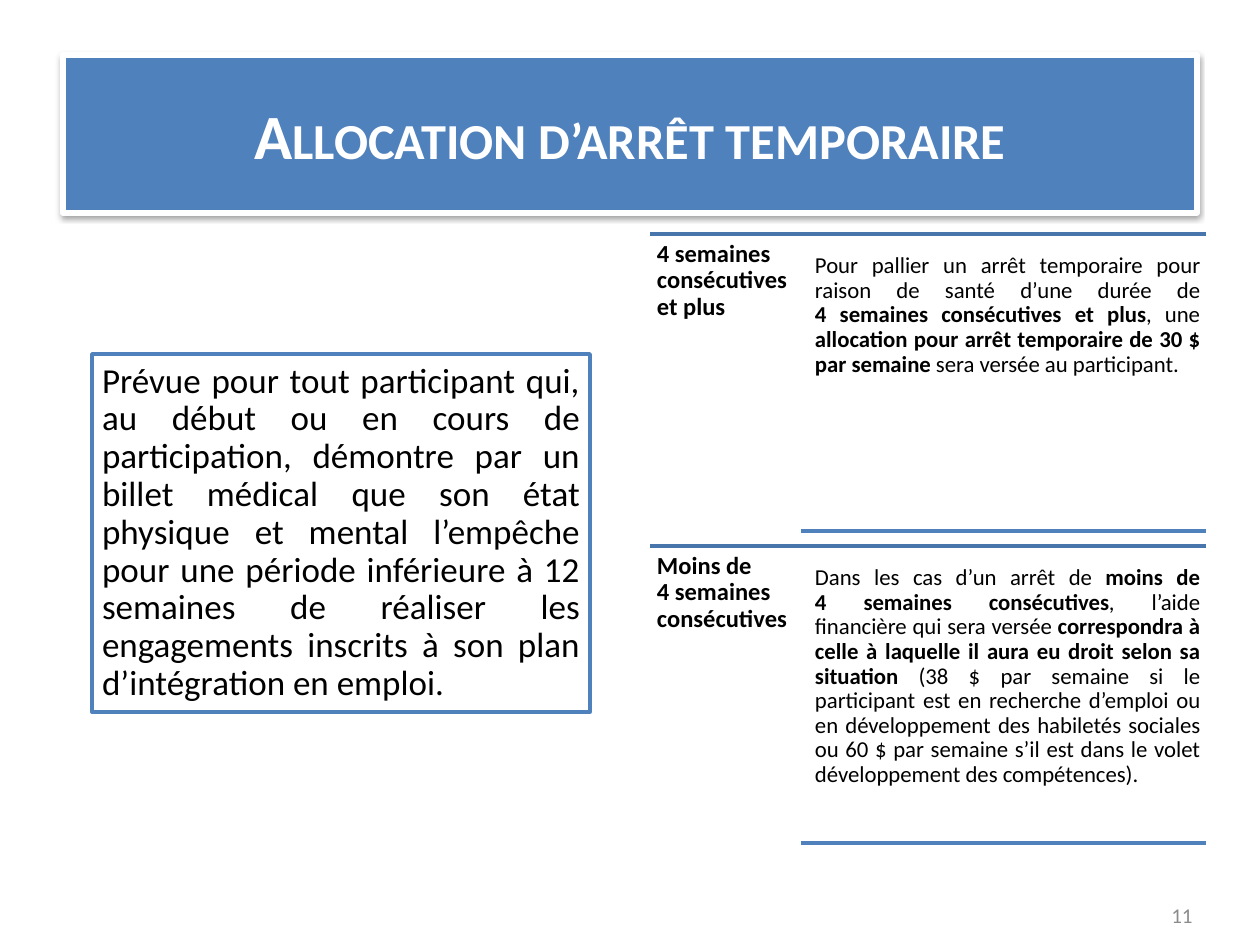
from dataclasses import dataclass

from lxml import etree
from pptx import Presentation
from pptx import util as u
from pptx.dml.color import RGBColor
from pptx.enum import shapes, text
from pptx.oxml import parse_xml
from pptx.oxml.ns import qn

EMU_PER_PX = 914400 / 126
BLUE = RGBColor(0x4F, 0x81, 0xBD)
DARK_BLUE = RGBColor(0x48, 0x75, 0xAC)
WHITE = RGBColor(0xFF, 0xFF, 0xFF)
BLACK = RGBColor(0, 0, 0)
GREY = RGBColor(0x8C, 0x8C, 0x8C)
FONT = "Calibri"
LEFT, CENTER = text.PP_ALIGN.LEFT, text.PP_ALIGN.CENTER
RIGHT, JUSTIFY = text.PP_ALIGN.RIGHT, text.PP_ALIGN.JUSTIFY
TOP, MIDDLE = text.MSO_ANCHOR.TOP, text.MSO_ANCHOR.MIDDLE

TITLE_SHADOW = (
    '<a:effectLst xmlns:a="http://schemas.openxmlformats.org/drawingml/2006/main">'
    '<a:outerShdw blurRad="39370" dist="20320" dir="5400000" rotWithShape="0">'
    '<a:srgbClr val="000000"><a:alpha val="38000"/></a:srgbClr>'
    '</a:outerShdw></a:effectLst>'
)


@dataclass(frozen=True)
class Span:
    words: str
    bold: bool = False
    break_before: bool = False


@dataclass(frozen=True)
class Style:
    size: int
    align: text.PP_ALIGN = LEFT
    color: RGBColor = BLACK
    bold: bool | None = None
    spacing: float | None = None


@dataclass(frozen=True)
class Case:
    label: list[Span]
    details: list[Span]


PURPOSE = Span(
    "Prévue pour tout participant qui, au début ou en cours de participation, "
    "démontre par un billet médical que son état physique et mental l’empêche "
    "pour une période inférieure à 12 semaines de réaliser les engagements "
    "inscrits à son plan d’intégration en emploi."
)
CASES = [
    Case(
        [Span("4 semaines consécutives et plus", True)],
        [
            Span("Pour pallier un arrêt temporaire pour raison de santé d’une durée de"),
            Span("4 semaines consécutives et plus", True, break_before=True),
            Span(", une "),
            Span("allocation pour arrêt temporaire de 30 $ par semaine", True),
            Span(" sera versée au participant."),
        ],
    ),
    Case(
        [Span("Moins de", True), Span("4 semaines consécutives", True, break_before=True)],
        [
            Span("Dans les cas d’un arrêt de "),
            Span("moins de", True),
            Span("4 semaines consécutives", True, break_before=True),
            Span(", l’aide financière qui sera versée "),
            Span("correspondra à celle à laquelle il aura eu droit selon sa situation ", True),
            Span(
                "(38 $ par semaine si le participant est en recherche d’emploi ou en "
                "développement des habiletés sociales ou 60 $ par semaine s’il est "
                "dans le volet développement des compétences)."
            ),
        ],
    ),
]
CASES_TOP, CASE_PITCH = 234, 312


def px(length: int) -> u.Emu:
    return u.Emu(round(length * EMU_PER_PX))


def write(shape, spans: list[Span], style: Style, anchor=TOP, inset: int | None = None) -> None:
    frame = shape.text_frame
    frame.word_wrap = True
    frame.auto_size = text.MSO_AUTO_SIZE.NONE
    frame.vertical_anchor = anchor
    if inset is not None:
        frame.margin_left = frame.margin_right = px(inset)
        frame.margin_top = frame.margin_bottom = px(inset)
    para = frame.paragraphs[0]
    para.alignment = style.align
    if style.spacing:
        para.line_spacing = style.spacing
        para.space_after = u.Pt(round(style.size * 0.35))
    para.font.name, para.font.size = FONT, u.Pt(style.size)
    para.font.color.rgb, para.font.bold = style.color, style.bold
    for span in spans:
        if span.break_before:
            para.add_line_break()
        run = para.add_run()
        run.text = span.words
        if style.bold is None:
            run.font.bold = span.bold


def add_text(page, left: int, top: int, width: int, height: int,
             spans: list[Span], style: Style, anchor=TOP, inset: int | None = None) -> None:
    box = page.shapes.add_textbox(px(left), px(top), px(width), px(height))
    write(box, spans, style, anchor, inset)


def add_rule(page, left: int, right: int, y: int, color: RGBColor) -> None:
    rule = page.shapes.add_connector(
        shapes.MSO_CONNECTOR.STRAIGHT, px(left), px(y), px(right), px(y))
    rule.line.color.rgb, rule.line.width = color, u.Pt(2)
    etree.SubElement(rule._element.spPr, qn("a:effectLst"))


def add_case(page, top: int, case: Case) -> None:
    add_rule(page, 650, 1206, top, DARK_BLUE)
    add_text(page, 650, top, 151, 311, case.label, Style(14, bold=True, spacing=0.9), inset=7)
    add_text(page, 809, top + 14, 397, 283, case.details,
             Style(13, JUSTIFY, spacing=0.9), inset=6)
    add_rule(page, 801, 1206, top + 297, BLUE)


def add_title(page) -> None:
    title = page.shapes.title
    title.left, title.top, title.width, title.height = px(63), px(55), px(1134), px(158)
    title.fill.solid()
    title.fill.fore_color.rgb = BLUE
    title.line.color.rgb, title.line.width = WHITE, u.Pt(3)
    title._element.spPr.append(parse_xml(TITLE_SHADOW))
    write(title, [Span("Allocation d’arrêt temporaire")],
          Style(36, CENTER, WHITE, bold=True), MIDDLE)
    title.text_frame.paragraphs[0].runs[0].font._element.set("cap", "small")


def add_purpose(page) -> None:
    panel = page.shapes.add_shape(
        shapes.MSO_SHAPE.RECTANGLE, px(92), px(354), px(498), px(358))
    panel.shadow.inherit = False
    panel.fill.solid()
    panel.fill.fore_color.rgb = WHITE
    panel.line.color.rgb, panel.line.width = BLUE, u.Pt(2)
    write(panel, [PURPOSE], Style(20, JUSTIFY, spacing=0.9), MIDDLE, inset=10)


def main() -> None:
    deck = Presentation()
    deck.slide_width, deck.slide_height = px(1260), px(945)
    page = deck.slides.add_slide(deck.slide_layouts[5])

    # Title banner and purpose of the allowance
    add_title(page)
    add_purpose(page)

    # One ruled block for each length of leave
    for index, case in enumerate(CASES):
        add_case(page, CASES_TOP + index * CASE_PITCH, case)

    # Page number
    add_text(page, 911, 890, 294, 50, [Span("11")], Style(12, RIGHT, GREY), MIDDLE)

    deck.save("out.pptx")


if __name__ == "__main__":
    main()
